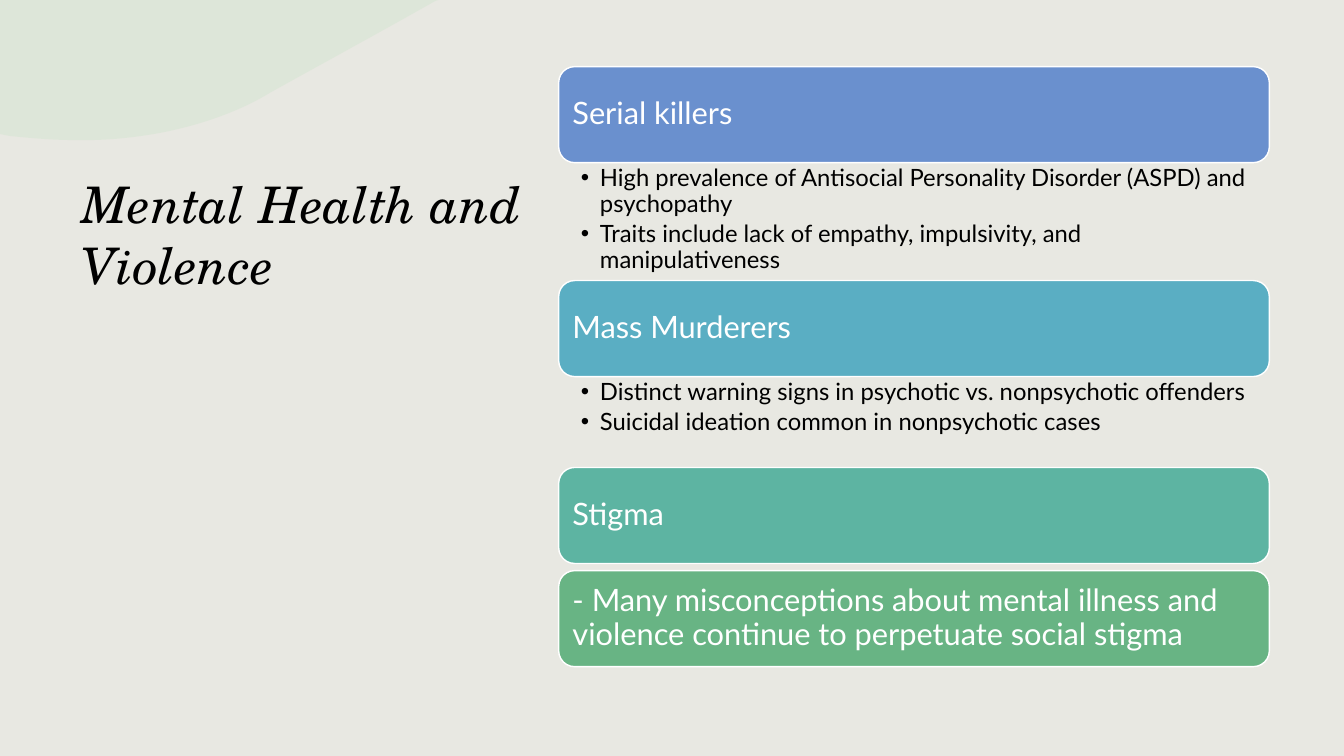
from dataclasses import dataclass

from lxml.etree import SubElement
from pptx import Presentation
from pptx.dml.color import RGBColor
from pptx.enum.shapes import MSO_SHAPE
from pptx.enum.text import MSO_ANCHOR, MSO_AUTO_SIZE, PP_ALIGN
from pptx.oxml.ns import qn
from pptx.util import Cm, Pt


@dataclass(frozen=True)
class Theme:
    background: str = "E8E8E2"
    corner: str = "C0E2BF"
    corner_alpha: int = 25
    dark: str = "000000"
    light: str = "FFFFFF"
    title_font: str = "TeX Gyre Schola"
    body_font: str = "Lato"
    title_size: float = 36
    heading_size: float = 22
    bullet_size: float = 17


THEME = Theme()

TOPICS = [
    ("Serial killers", "6A90CE", 2.97, [
        "High prevalence of Antisocial Personality Disorder (ASPD) and psychopathy",
        "Traits include lack of empathy, impulsivity, and manipulativeness",
    ]),
    ("Mass Murderers", "5AAEC3", 2.29, [
        "Distinct warning signs in psychotic vs. nonpsychotic offenders",
        "Suicidal ideation common in nonpsychotic cases",
    ]),
    ("Stigma", "5DB4A2", 0.18, []),
    ("- Many misconceptions about mental illness and violence continue "
     "to perpetuate social stigma", "68B484", 0, []),
]


def rgb(value):
    return RGBColor.from_string(value)


def apply(target, values):
    for name, value in values.items():
        setattr(target, name, value)


def place(shape, left, top, width, height):
    apply(shape, {"left": Cm(left), "top": Cm(top),
                  "width": Cm(width), "height": Cm(height)})


def format_frame(frame, anchor, left, top, right, bottom):
    apply(frame, {"word_wrap": True, "auto_size": MSO_AUTO_SIZE.NONE,
                  "vertical_anchor": anchor,
                  "margin_left": Cm(left), "margin_top": Cm(top),
                  "margin_right": Cm(right), "margin_bottom": Cm(bottom)})


def write(paragraph, text, font, size, color, italic=False, spacing=1.0):
    apply(paragraph, {"alignment": PP_ALIGN.LEFT, "line_spacing": spacing})
    run = paragraph.add_run()
    run.text = text
    apply(run.font, {"name": font, "size": Pt(size), "italic": italic})
    run.font.color.rgb = rgb(color)


def curve_points(start, first, second, end, steps=20):
    for step in range(1, steps + 1):
        t = step / steps
        u = 1 - t
        yield tuple(u**3 * a + 3 * u * u * t * b + 3 * u * t * t * c + t**3 * d
                    for a, b, c, d in zip(start, first, second, end))


def add_corner(slide, left, top, width, height):
    curves = [
        ((0.993, 0.007), (0.867, 0.23), (0.736, 0.453), (0.616, 0.662)),
        ((0.616, 0.662), (0.541, 0.806), (0.448, 0.9), (0.363, 0.95)),
        ((0.363, 0.95), (0.299, 0.986), (0.234, 1.005), (0.17, 1)),
        ((0.17, 1), (0.122, 1), (0.071, 0.986), (0.023, 0.971)),
    ]
    outline = [(1, 0), curves[0][0]]
    for curve in curves:
        outline.extend(curve_points(*curve))
    outline.append((0, 0.957))
    points = [(Cm(left + x * width), Cm(top + y * height)) for x, y in outline]
    builder = slide.shapes.build_freeform(Cm(left), Cm(top))
    builder.add_line_segments(points, close=True)
    shape = builder.convert_to_shape()
    shape.shadow.inherit = False
    shape.line.fill.background()
    shape.fill.solid()
    shape.fill.fore_color.rgb = rgb(THEME.corner)
    color = shape.fill._xPr.find(".//" + qn("a:srgbClr"))
    SubElement(color, qn("a:alpha"), val=str(THEME.corner_alpha * 1000))


def add_title(slide, left, top, width, height):
    title = slide.shapes.title
    place(title, left, top, width, height)
    format_frame(title.text_frame, MSO_ANCHOR.TOP, 0.25, 0.13, 0.25, 0.13)
    write(title.text_frame.paragraphs[0], "Mental Health and Violence",
          THEME.title_font, THEME.title_size, THEME.dark, italic=True)


def add_bar(slide, text, color, left, top, width, height):
    bar = slide.shapes.add_shape(MSO_SHAPE.ROUNDED_RECTANGLE, 0, 0, 0, 0)
    place(bar, left, top, width, height)
    bar.shadow.inherit = False
    bar.fill.solid()
    bar.fill.fore_color.rgb = rgb(color)
    bar.line.color.rgb = rgb(THEME.light)
    bar.line.width = Pt(1)
    format_frame(bar.text_frame, MSO_ANCHOR.MIDDLE, 0.23, 0.23, 0.23, 0.23)
    write(bar.text_frame.paragraphs[0], text, THEME.body_font,
          THEME.heading_size, THEME.light, spacing=0.9)


def add_bullets(slide, lines, left, top, width, height):
    box = slide.shapes.add_textbox(0, 0, 0, 0)
    place(box, left, top, width, height)
    frame = box.text_frame
    format_frame(frame, MSO_ANCHOR.TOP, 0.56, 0.08, 0.43, 0.08)
    for index, line in enumerate(lines):
        paragraph = frame.add_paragraph() if index else frame.paragraphs[0]
        write(paragraph, line, THEME.body_font, THEME.bullet_size,
              THEME.dark, spacing=0.9)
        paragraph.space_after = Pt(THEME.bullet_size * 0.2)
        properties = paragraph._p.get_or_add_pPr()
        properties.set("marL", str(Cm(0.48)))
        properties.set("indent", str(-Cm(0.48)))
        SubElement(properties, qn("a:buFont"), typeface="Arial")
        SubElement(properties, qn("a:buChar"), char="•")


def add_topics(slide, left, top, width, bar_height):
    for heading, color, space_below, lines in TOPICS:
        add_bar(slide, heading, color, left, top, width, bar_height)
        top += bar_height
        if lines:
            add_bullets(slide, lines, left, top, width, space_below)
        top += space_below


def main():
    presentation = Presentation()
    apply(presentation, {"slide_width": Cm(33.87), "slide_height": Cm(19.05)})
    slide = presentation.slides.add_slide(presentation.slide_layouts[5])
    slide.background.fill.solid()
    slide.background.fill.fore_color.rgb = rgb(THEME.background)
    add_title(slide, 1.8, 4.24, 12.29, 12.62)
    add_corner(slide, 0, 0, 11.05, 3.53)
    add_topics(slide, 14.08, 1.68, 17.91, 2.42)
    presentation.save("out.pptx")


if __name__ == "__main__":
    main()
